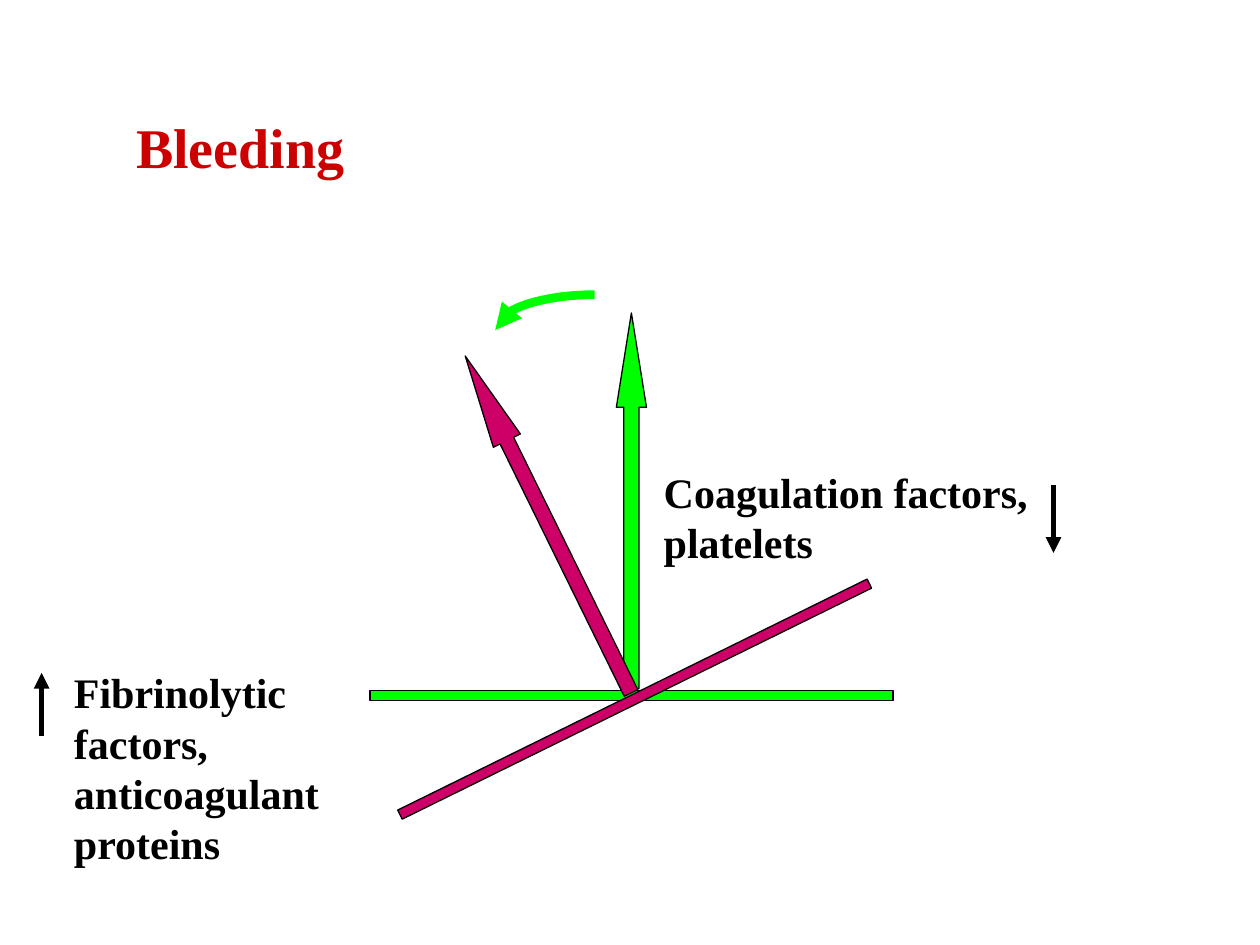
from math import cos, pi, sin

from lxml.etree import SubElement
from pptx import Presentation
from pptx.dml.color import RGBColor
from pptx.enum.shapes import MSO_CONNECTOR as Conn, MSO_SHAPE as Kind
from pptx.enum.text import MSO_ANCHOR as Anchor, MSO_AUTO_SIZE as Auto, PP_ALIGN as Align
from pptx.oxml.ns import qn
from pptx.util import Pt

FONT = "Times New Roman"
BLACK, RED, GREEN, PINK = "000000", "CC0000", "00FF00", "CC0066"
TILT = -26.2


def paint(fmt, color):
    """Give a fill a solid colour."""
    fmt.solid()
    fmt.fore_color.rgb = RGBColor.from_string(color)


def write(shape, lines, size, color):
    """Write bold, left-aligned lines into a shape."""
    frame = shape.text_frame
    frame.text = "\n".join(lines)
    frame.word_wrap = False
    frame.auto_size = Auto.SHAPE_TO_FIT_TEXT
    frame.vertical_anchor = Anchor.TOP
    for para in frame.paragraphs:
        para.alignment = Align.LEFT
        font = para.font
        font.name, font.size, font.bold = FONT, Pt(size), True
        paint(font.fill, color)


def title(slide, text, left, top, width, height):
    """Place and fill the title."""
    shape = slide.shapes.title
    shape.left, shape.top = Pt(left), Pt(top)
    shape.width, shape.height = Pt(width), Pt(height)
    write(shape, [text], 32, RED)


def label(slide, lines, left, top, width, height):
    """Add a black text label."""
    box = slide.shapes.add_textbox(Pt(left), Pt(top), Pt(width), Pt(height))
    write(box, lines, 24, BLACK)


def block(slide, kind, left, top, width, height, color, turn):
    """Add an outlined, turned preset shape."""
    shape = slide.shapes.add_shape(kind, Pt(left), Pt(top), Pt(width), Pt(height))
    shape.shadow.inherit = False
    shape.rotation = turn
    paint(shape.fill, color)
    paint(shape.line.fill, BLACK)
    shape.line.width = Pt(0.75)
    return shape


def scale(slide, needle, beam, color, turn=0):
    """Add a balance made of a needle and a beam."""
    arrow = block(slide, Kind.UP_ARROW, *needle, 17.2, 214.6, color, turn)
    arrow.adjustments[0], arrow.adjustments[1] = 0.5, 3.135
    block(slide, Kind.RECTANGLE, *beam, 299, 5.8, color, turn)


def stroke(shape, color, width):
    """Draw a line with an arrowhead at its end."""
    paint(shape.line.fill, color)
    shape.line.width = Pt(width)
    SubElement(shape.line._get_or_add_ln(), qn("a:tailEnd"), type="triangle")


def trend(slide, x, start, end):
    """Add a vertical arrow."""
    line = slide.shapes.add_connector(Conn.STRAIGHT, Pt(x), Pt(start), Pt(x), Pt(end))
    stroke(line, BLACK, 3)
    SubElement(line._element.spPr, qn("a:effectLst"))


def swing(slide, left, top, width, height, steps=16):
    """Add a quarter-ellipse arrow from top right to bottom left."""
    turns = [i * pi / 2 / steps for i in range(steps + 1)]
    dots = [(Pt(left + width * (1 - sin(t))), Pt(top + height * (1 - cos(t))))
            for t in turns]
    path = slide.shapes.build_freeform(*dots[0])
    path.add_line_segments(dots[1:], close=False)
    curve = path.convert_to_shape()
    curve.shadow.inherit = False
    curve.fill.background()
    stroke(curve, GREEN, 5)


def main():
    """Build the slide."""
    deck = Presentation()
    deck.slide_width, deck.slide_height = Pt(720), Pt(540)
    slide = deck.slides.add_slide(deck.slide_layouts[5])
    title(slide, "Bleeding", 70.6, 60.5, 134, 45.4)
    scale(slide, (352.2, 178.8), (211.4, 394.4), GREEN)
    scale(slide, (304.6, 192.4), (213.2, 396.6), PINK, TILT)
    label(slide, ["Fibrinolytic", "factors,", "anticoagulant", "proteins"],
          35.2, 377.4, 160.6, 122.4)
    label(slide, ["Coagulation factors,", "platelets"], 372.2, 262.8, 222.5, 64.8)
    swing(slide, 283, 168.4, 56.8, 20.2)
    trend(slide, 602, 277.2, 316)
    trend(slide, 23.8, 420.5, 384.5)
    deck.save("out.pptx")


if __name__ == "__main__":
    main()
